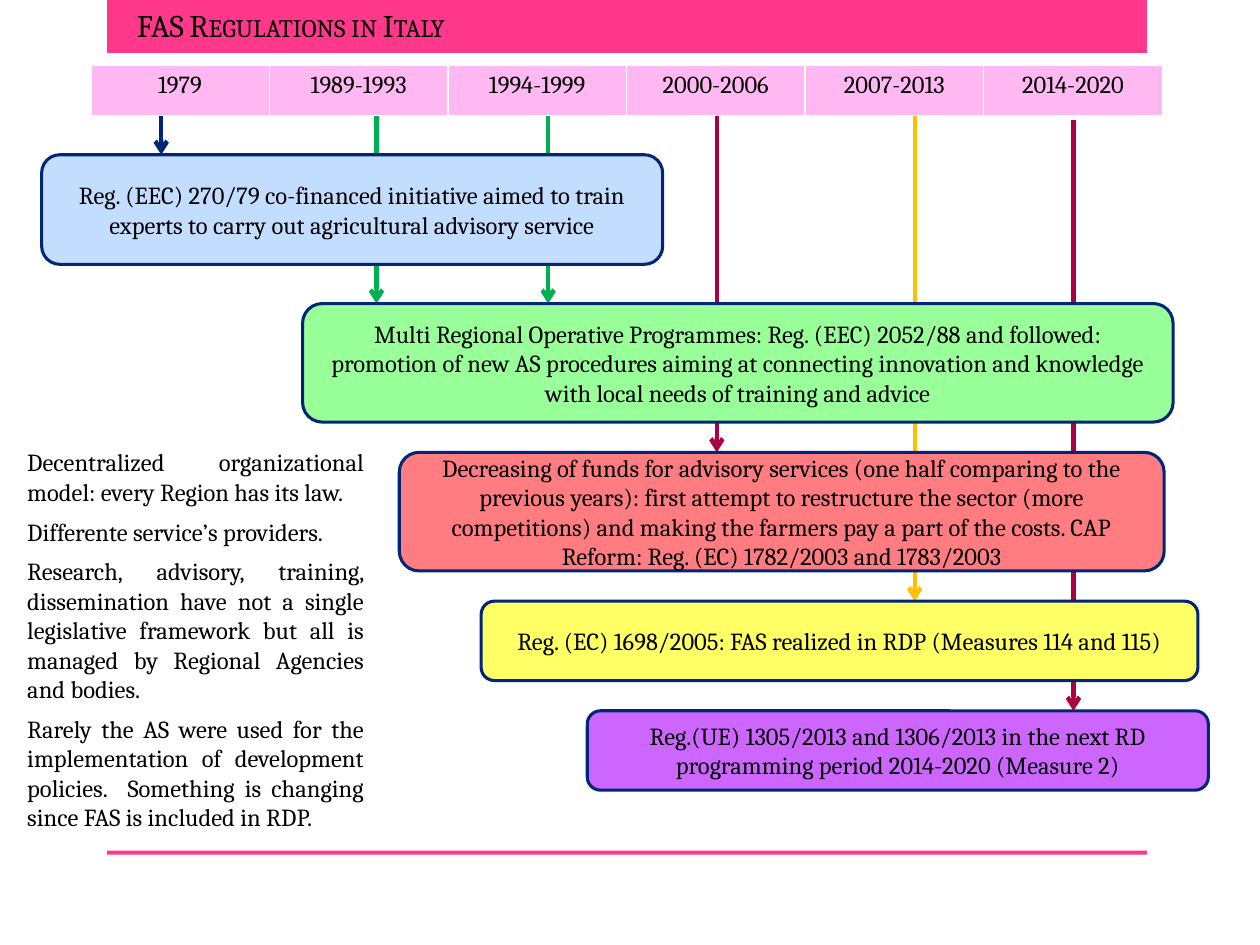
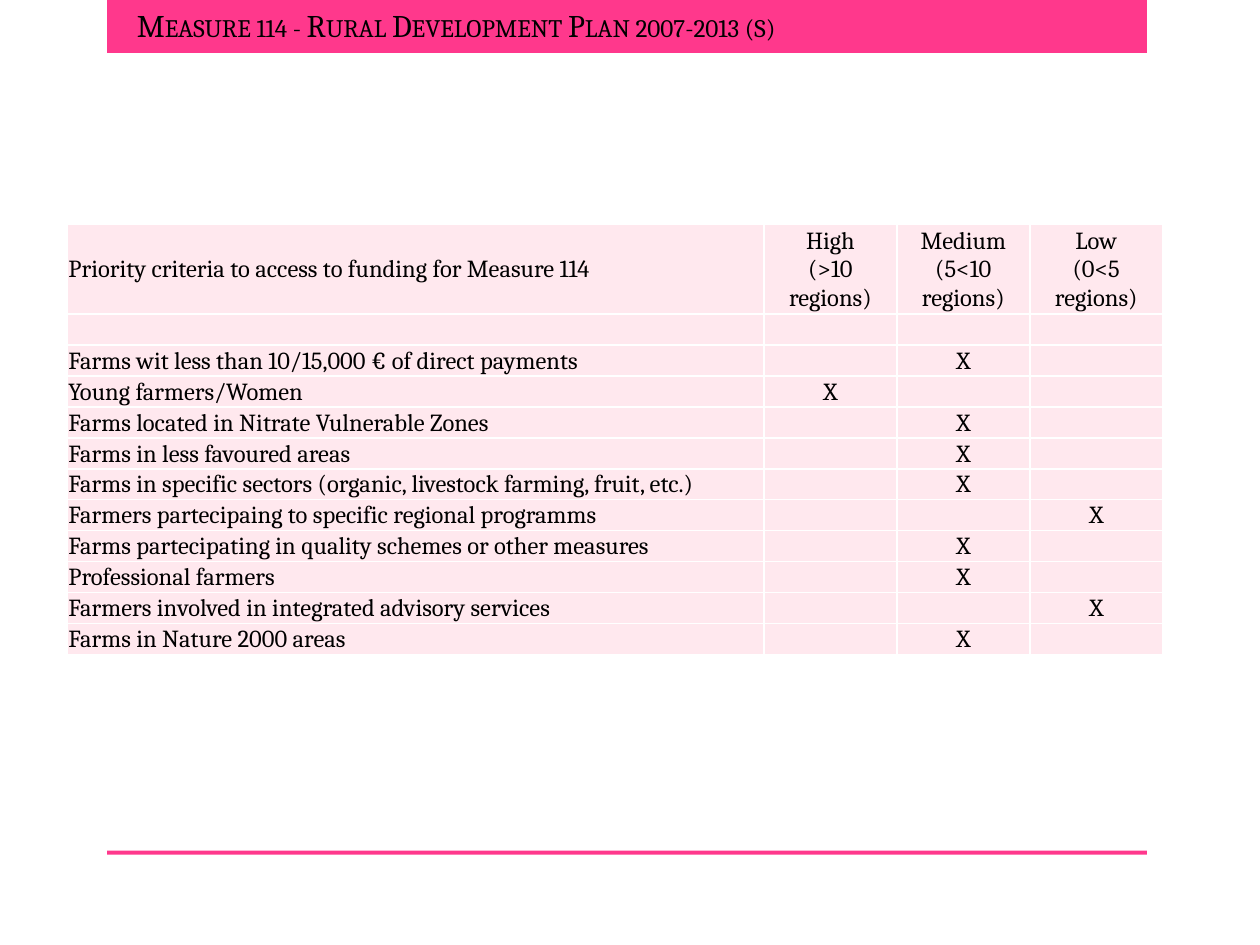
import dataclasses

import pptx
import pptx.dml.color
import pptx.enum.shapes
import pptx.enum.text
import pptx.oxml.ns
import pptx.util
from lxml import etree

Cm = pptx.util.Cm
Pt = pptx.util.Pt
qn = pptx.oxml.ns.qn
Align = pptx.enum.text.PP_ALIGN
Anchor = pptx.enum.text.MSO_ANCHOR
Shape = pptx.enum.shapes.MSO_SHAPE


@dataclasses.dataclass(frozen=True)
class Theme:
    font: str = "Cambria"
    title_size: int = 18
    body_size: int = 14
    text: str = "000000"
    band: str = "FF388C"
    period: str = "FFB8F2"
    criteria: str = "FFE8EE"
    grid: str = "FFFFFF"
    outline: str = "002675"
    navy: str = "002776"
    green: str = "00B050"
    crimson: str = "AB0043"
    amber: str = "FFC000"
    blue_box: str = "C3DDFF"
    green_box: str = "99FF99"
    red_box: str = "FF7C80"
    yellow_box: str = "FFFF66"
    purple_box: str = "CC66FF"


THEME = Theme()

PERIODS = ["1979", "1989-1993", "1994-1999", "2000-2006", "2007-2013", "2014-2020"]

# Each step: text, fill, box (left, top, width, height), arrow colour,
# arrow start height and arrow positions; listed from back to front
STEPS = [
    ("Reg.(UE) 1305/2013 and 1306/2013 in the next RD programming period "
     "2014-2020 (Measure 2)",
     THEME.purple_box, (11.84, 14.33, 12.52, 1.6), THEME.crimson, 2.41, [21.64]),
    ("Reg. (EC) 1698/2005: FAS realized in RDP (Measures 114 and 115)",
     THEME.yellow_box, (9.7, 12.12, 14.45, 1.6), THEME.amber, 2.34, [18.44]),
    ("Decreasing of funds for advisory services (one half comparing to the "
     "previous years): first attempt to restructure the sector (more "
     "competitions) and making the farmers pay a part of the costs. CAP "
     "Reform: Reg. (EC) 1782/2003 and 1783/2003",
     THEME.red_box, (8.05, 9.12, 15.42, 2.39), THEME.crimson, 2.34, [14.45]),
    ("Multi Regional Operative Programmes: Reg. (EEC) 2052/88 and followed: "
     "promotion of new AS procedures aiming at connecting innovation and "
     "knowledge with local needs of training and advice",
     THEME.green_box, (6.1, 6.12, 17.55, 2.39), THEME.green, 2.34, [7.59, 11.05]),
    ("Reg. (EEC) 270/79 co-financed initiative aimed to train experts to "
     "carry out agricultural advisory service",
     THEME.blue_box, (0.84, 3.12, 12.52, 2.21), THEME.navy, 2.34, [3.25]),
]

REMARKS = [
    "Decentralized organizational model: every Region has its law.",
    "Differente service’s providers.",
    "Research, advisory, training, dissemination have not a single legislative "
    "framework but all is managed by Regional Agencies and bodies.",
    "Rarely the AS were used for the implementation of development policies.  "
    "Something is changing since FAS is included in RDP.",
]

# A vertical tab is a line break inside the paragraph
CRITERIA_HEADER = ["Priority criteria to access to funding for Measure 114",
                   "High\v(>10 regions)", "Medium\v(5<10 regions)", "Low\v(0<5 regions)"]
HIGH, MEDIUM, LOW = 1, 2, 3
CRITERIA = [
    ("Farms wit less than 10/15,000 € of direct payments", MEDIUM),
    ("Young farmers/Women", HIGH),
    ("Farms located in Nitrate Vulnerable Zones", MEDIUM),
    ("Farms in less favoured areas", MEDIUM),
    ("Farms in specific sectors (organic, livestock farming, fruit, etc.)", MEDIUM),
    ("Farmers partecipaing to specific regional programms", LOW),
    ("Farms partecipating in quality schemes or other measures", MEDIUM),
    ("Professional farmers", MEDIUM),
    ("Farmers involved in integrated advisory services", LOW),
    ("Farms in Nature 2000 areas", MEDIUM),
]


def rgb(value):
    return pptx.dml.color.RGBColor.from_string(value)


def write(frame, text, align, size=THEME.body_size, before=None):
    """Fill a text frame and format every paragraph and run."""
    frame.text = text
    for para in frame.paragraphs:
        para.alignment = align
        if before is not None:
            para.space_before = Pt(before)
        for span in para.runs:
            span.font.name = THEME.font
            span.font.size = Pt(size)
            span.font.color.rgb = rgb(THEME.text)
        # Line breaks and empty paragraphs need their own type size
        for line_break in para._p.findall(qn("a:br")):
            etree.SubElement(line_break, qn("a:rPr")).set("sz", str(size * 100))
        if not para.runs:
            etree.SubElement(para._p, qn("a:endParaRPr")).set("sz", str(size * 100))


def add_box(page, kind, place, fill):
    box = page.shapes.add_shape(kind, *map(Cm, place))
    box.shadow.inherit = False
    box.fill.solid()
    box.fill.fore_color.rgb = rgb(fill)
    box.line.fill.background()
    return box


def add_text(page, place, text, size=THEME.body_size):
    box = page.shapes.add_textbox(*map(Cm, place))
    frame = box.text_frame
    frame.word_wrap = True
    frame.auto_size = pptx.enum.text.MSO_AUTO_SIZE.SHAPE_TO_FIT_TEXT
    write(frame, text, Align.JUSTIFY, size, before=6)
    return box


def add_step(page, text, fill, place):
    box = add_box(page, Shape.ROUNDED_RECTANGLE, place, fill)
    box.line.color.rgb = rgb(THEME.outline)
    box.line.width = Pt(1.75)
    box.text_frame.word_wrap = True
    box.text_frame.vertical_anchor = Anchor.MIDDLE
    write(box.text_frame, text, Align.CENTER)


def add_down_arrow(page, x, top, bottom, color):
    arrow = page.shapes.add_connector(
        pptx.enum.shapes.MSO_CONNECTOR.STRAIGHT, Cm(x), Cm(top), Cm(x), Cm(bottom))
    arrow.line.color.rgb = rgb(color)
    arrow.line.width = Pt(2.5)
    etree.SubElement(arrow.line._get_or_add_ln(), qn("a:tailEnd")).set("type", "arrow")
    etree.SubElement(arrow._element.spPr, qn("a:effectLst"))


def style_cell(cell, fill, bottom_width=1):
    """Draw the cell borders, then the fill, which must follow them."""
    properties = cell._tc.get_or_add_tcPr()
    for side, width in (("L", 1), ("R", 1), ("T", 1), ("B", bottom_width)):
        border = etree.SubElement(properties, qn("a:ln" + side), w=str(Pt(width)))
        paint = etree.SubElement(border, qn("a:solidFill"))
        etree.SubElement(paint, qn("a:srgbClr")).set("val", THEME.grid)
    cell.fill.solid()
    cell.fill.fore_color.rgb = rgb(fill)


def add_grid(page, left, top, widths, heights):
    table = page.shapes.add_table(
        len(heights), len(widths), Cm(left), Cm(top),
        Cm(sum(widths)), Cm(sum(heights))).table
    table.first_row = False
    table.horz_banding = False
    for column, width in zip(table.columns, widths):
        column.width = Cm(width)
    for row, height in zip(table.rows, heights):
        row.height = Cm(height)
    return table


def add_page(deck, title):
    """Blank page with the title band and the bottom rule."""
    page = deck.slides.add_slide(deck.slide_layouts[6])
    for top, height in ((0, 1.07), (17.15, 0.08)):
        add_box(page, Shape.RECTANGLE, (2.16, top, 20.96, height), THEME.band)
    heading = add_text(page, (2.51, 0, 21.01, 1.02), title, THEME.title_size)
    for span in heading.text_frame.paragraphs[0].runs:
        span.font._element.set("cap", "small")
    return page


def build_regulations(deck):
    page = add_page(deck, "FAS Regulations in Italy")

    # Periods
    table = add_grid(page, 1.83, 1.32, [3.6] * len(PERIODS), [1.04])
    for cell, period in zip(table.rows[0].cells, PERIODS):
        write(cell.text_frame, period, Align.CENTER)
        style_cell(cell, THEME.period, bottom_width=3)

    # Regulations, each reached by arrows from its periods
    for text, fill, place, color, start, positions in STEPS:
        for x in positions:
            add_down_arrow(page, x, start, place[1], color)
        add_step(page, text, fill, place)

    # Remarks
    add_text(page, (0.3, 8.89, 7.29, 8.08), "\n".join(REMARKS))


def build_criteria(deck):
    page = add_page(deck, "Measure 114 - Rural Development Plan 2007-2013 (s)")

    # Header, one empty row, then a mark for each criterion
    rows = [CRITERIA_HEADER, [""] * 4]
    for name, level in CRITERIA:
        rows.append([name] + ["X" if level == column else ""
                              for column in (HIGH, MEDIUM, LOW)])

    table = add_grid(page, 1.35, 4.52, [14.05] + [2.68] * 3,
                     [1.8] + [0.62] * (len(rows) - 1))
    for row, texts in zip(table.rows, rows):
        for column, (cell, text) in enumerate(zip(row.cells, texts)):
            cell.margin_left = cell.margin_right = cell.margin_top = Cm(0.03)
            cell.margin_bottom = 0
            cell.vertical_anchor = Anchor.MIDDLE
            write(cell.text_frame, text, Align.CENTER if column else Align.LEFT)
            style_cell(cell, THEME.criteria)


def main():
    deck = pptx.Presentation()
    deck.slide_width = Cm(25.4)
    deck.slide_height = Cm(19.05)
    build_regulations(deck)
    build_criteria(deck)
    deck.save("out.pptx")


if __name__ == "__main__":
    main()
